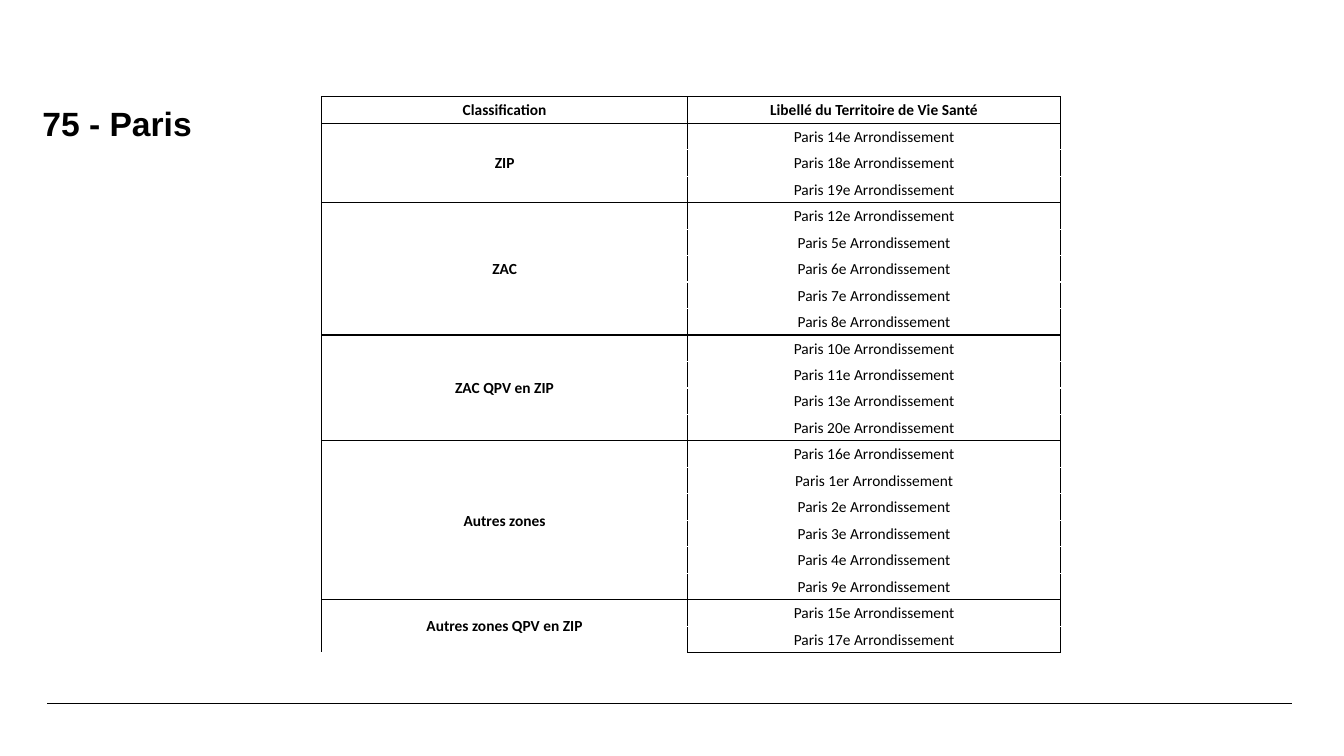
from lxml import etree
from pptx import Presentation
from pptx.dml.color import RGBColor
from pptx.enum.shapes import MSO_CONNECTOR
from pptx.enum.text import MSO_ANCHOR, MSO_AUTO_SIZE, PP_ALIGN
from pptx.oxml.ns import qn
from pptx.util import Inches, Pt

COLORS = {"ink": "000000", "paper": "FFFFFF"}
INK = RGBColor.from_string(COLORS["ink"])
PAPER = RGBColor.from_string(COLORS["paper"])

HEADERS = ("Classification", "Libellé du Territoire de Vie Santé")
ZONES = {
    "ZIP": ["14e", "18e", "19e"],
    "ZAC": ["12e", "5e", "6e", "7e", "8e"],
    "ZAC QPV en ZIP": ["10e", "11e", "13e", "20e"],
    "Autres zones": ["16e", "1er", "2e", "3e", "4e", "9e"],
    "Autres zones QPV en ZIP": ["15e", "17e"],
}
COL_WIDTHS = (3.63, 3.7)
TABLE_LEFT, TABLE_TOP, TABLE_HEIGHT = 3.19, 0.96, 5.52


def add_borders(cell, sides):
    """Draw 1 pt lines on the given sides, in the order L, R, T, B."""
    tc_pr = cell._tc.get_or_add_tcPr()
    for side in sides:
        ln = etree.SubElement(tc_pr, qn(f"a:ln{side}"), w=str(Pt(1)))
        fill = etree.SubElement(ln, qn("a:solidFill"))
        etree.SubElement(fill, qn("a:srgbClr"), val=COLORS["ink"])


def fill_cell(cell, text, bold, sides):
    add_borders(cell, sides)
    cell.fill.solid()
    cell.fill.fore_color.rgb = PAPER
    cell.vertical_anchor = MSO_ANCHOR.MIDDLE
    cell.margin_left = cell.margin_right = cell.margin_top = Inches(0.01)
    cell.margin_bottom = 0
    p = cell.text_frame.paragraphs[0]
    p.text = text
    p.alignment = PP_ALIGN.CENTER
    p.font.name, p.font.size, p.font.bold = "Calibri", Pt(11), bold
    p.font.color.rgb = INK
    for r in p.runs:
        r.font.name, r.font.size, r.font.bold = "Calibri", Pt(11), bold
        r.font.color.rgb = INK


prs = Presentation()
prs.slide_width, prs.slide_height = Inches(13.33), Inches(7.5)
s = prs.slides.add_slide(prs.slide_layouts[5])

# Footer rule, made of two overlapping lines
for start, end in ((0.47, 12.76), (0.53, 12.81)):
    rule = s.shapes.add_connector(
        MSO_CONNECTOR.STRAIGHT, Inches(start), Inches(6.98), Inches(end), Inches(6.98))
    rule.line.color.rgb = INK
    rule.line.width = Pt(0.8)
    etree.SubElement(rule._element.spPr, qn("a:effectLst"))

# Title
title = s.shapes.title
title.left, title.top = Inches(0.29), Inches(1.02)
title.width, title.height = Inches(10.12), Inches(0.68)
tf = title.text_frame
tf.text = "75 - Paris"
tf.word_wrap = True
tf.auto_size = MSO_AUTO_SIZE.NONE
tf.vertical_anchor = MSO_ANCHOR.TOP
tf.margin_left = tf.margin_right = tf.margin_top = tf.margin_bottom = 0
p = tf.paragraphs[0]
p.alignment = PP_ALIGN.LEFT
p.space_after = Pt(6.7)
p._p.get_or_add_pPr().set("marL", str(Inches(0.13)))
r = p.runs[0]
r.font.name, r.font.size, r.font.bold = "Arial", Pt(24), True
r.font.color.rgb = INK

# Table: one header row, then one block of rows per zone
row_count = 1 + sum(len(districts) for districts in ZONES.values())
frame = s.shapes.add_table(
    row_count, len(COL_WIDTHS), Inches(TABLE_LEFT), Inches(TABLE_TOP),
    Inches(sum(COL_WIDTHS)), Inches(TABLE_HEIGHT))
table = frame.table
table.first_row = table.horz_banding = False
for column, width in zip(table.columns, COL_WIDTHS):
    column.width = Inches(width)

for col, header in enumerate(HEADERS):
    fill_cell(table.cell(0, col), header, True, "LRTB")

row = 1
for zone, districts in ZONES.items():
    last = len(districts) - 1
    for i, district in enumerate(districts):
        sides = "LR" + ("T" if i == 0 else "") + ("B" if i == last else "")
        fill_cell(table.cell(row + i, 0), zone if i == 0 else "", True, sides)
        fill_cell(table.cell(row + i, 1), f"Paris {district} Arrondissement", False, sides)
    table.cell(row, 0).merge(table.cell(row + last, 0))
    row += len(districts)

prs.save("out.pptx")
